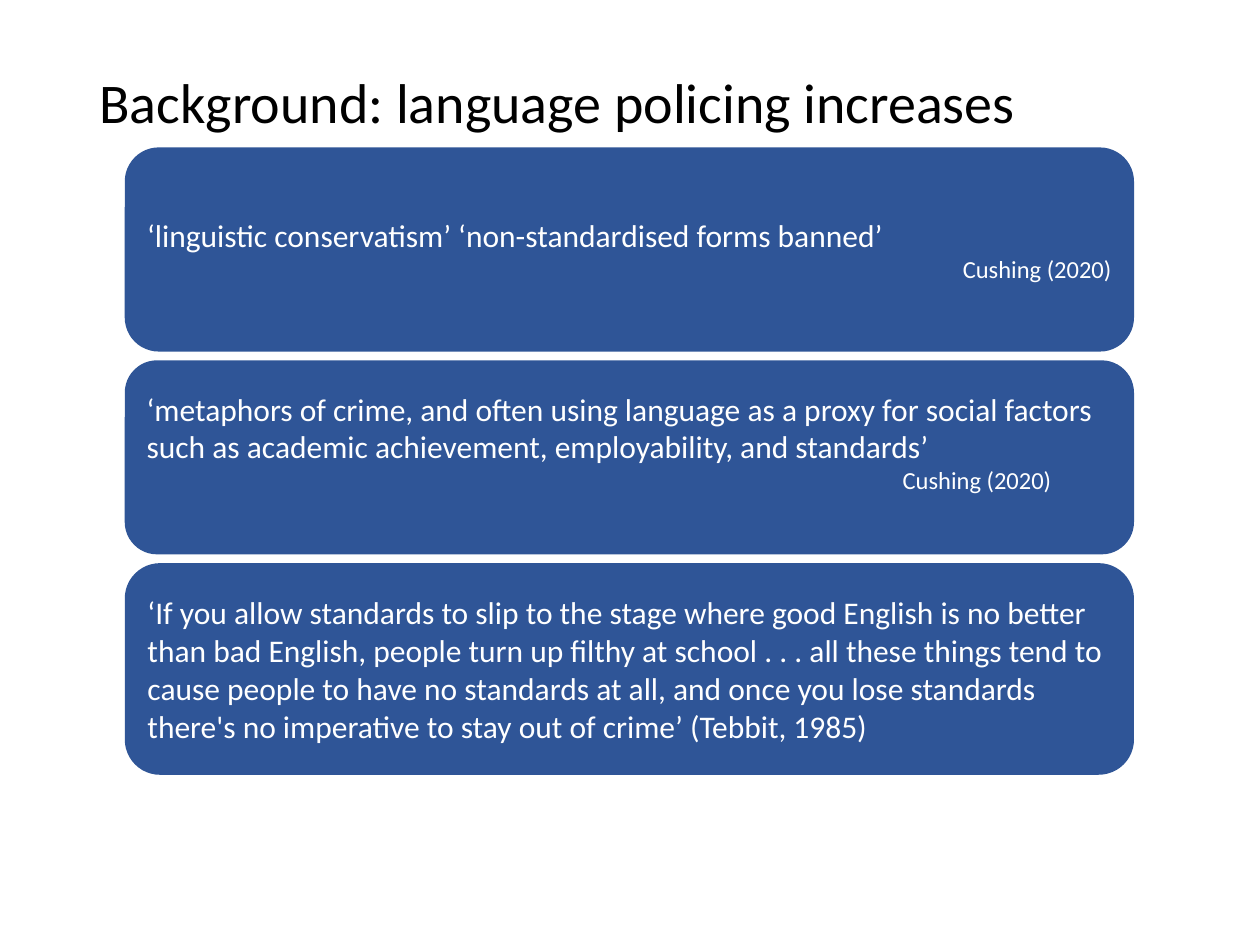
"""Build a slide with three quotations about language policing."""
from pptx import Presentation
from pptx.dml.color import RGBColor
from pptx.enum.shapes import MSO_SHAPE
from pptx.enum.text import MSO_ANCHOR, MSO_AUTO_SIZE, PP_ALIGN
from pptx.util import Inches, Pt


def color(value):
    return RGBColor.from_string(value)


def style(para, size, value):
    for span in para.runs:
        span.font.name = "Calibri"
        span.font.size = Pt(size)
        span.font.color.rgb = color(value)


deck = Presentation()
deck.slide_width, deck.slide_height = Inches(10), Inches(7.5)
column, row = deck.slide_width / 100, deck.slide_height / 100
page = deck.slides.add_slide(deck.slide_layouts[5])

title = page.shapes.title
title.left, title.top = int(6.9 * column), int(5.33 * row)
title.width, title.height = int(86.2 * column), int(11.6 * row)
title.text_frame.text = "Background: language policing increases"
title.text_frame.auto_size = MSO_AUTO_SIZE.NONE
title.text_frame.vertical_anchor = MSO_ANCHOR.MIDDLE
heading = title.text_frame.paragraphs[0]
heading.alignment = PP_ALIGN.LEFT
heading.line_spacing = 0.9
style(heading, 32, "000000")

quotes = [
    (21.6, "‘linguistic conservatism’ ‘non-standardised forms banned’",
     "Cushing (2020)", PP_ALIGN.RIGHT, 0, 0.05),
    (20.53, "‘metaphors of crime, and often using language as a proxy for social factors "
     "such as academic achievement, employability, and standards’",
     "Cushing (2020)", PP_ALIGN.LEFT, 60, 0.29),
    (22.4, "‘If you allow standards to slip to the stage where good English is no better "
     "than bad English, people turn up filthy at school . . . all these things tend to "
     "cause people to have no standards at all, and once you lose standards there's no "
     "imperative to stay out of crime’ (Tebbit, 1985)",
     None, PP_ALIGN.LEFT, 0, 0.05),
]
gap = 0.93
top = 15.6
for height, quote, source, alignment, indent, bottom_margin in quotes:
    box = page.shapes.add_shape(
        MSO_SHAPE.ROUNDED_RECTANGLE,
        int(9.9 * column), int(top * row), int(80.1 * column), int(height * row))
    box.shadow.inherit = False
    box.fill.solid()
    box.fill.fore_color.rgb = color("2F5597")
    box.line.fill.background()
    frame = box.text_frame
    frame.word_wrap = True
    frame.vertical_anchor = MSO_ANCHOR.MIDDLE
    frame.margin_bottom = Inches(bottom_margin)
    frame.text = quote
    frame.paragraphs[0].alignment = PP_ALIGN.LEFT
    style(frame.paragraphs[0], 18, "FFFFFF")
    if source:
        para = frame.add_paragraph()
        para.text = source
        para.alignment = alignment
        if indent:
            para._p.get_or_add_pPr().set("marL", str(int(indent * column)))
        style(para, 14, "FFFFFF")
    top += height + gap

deck.save("out.pptx")
